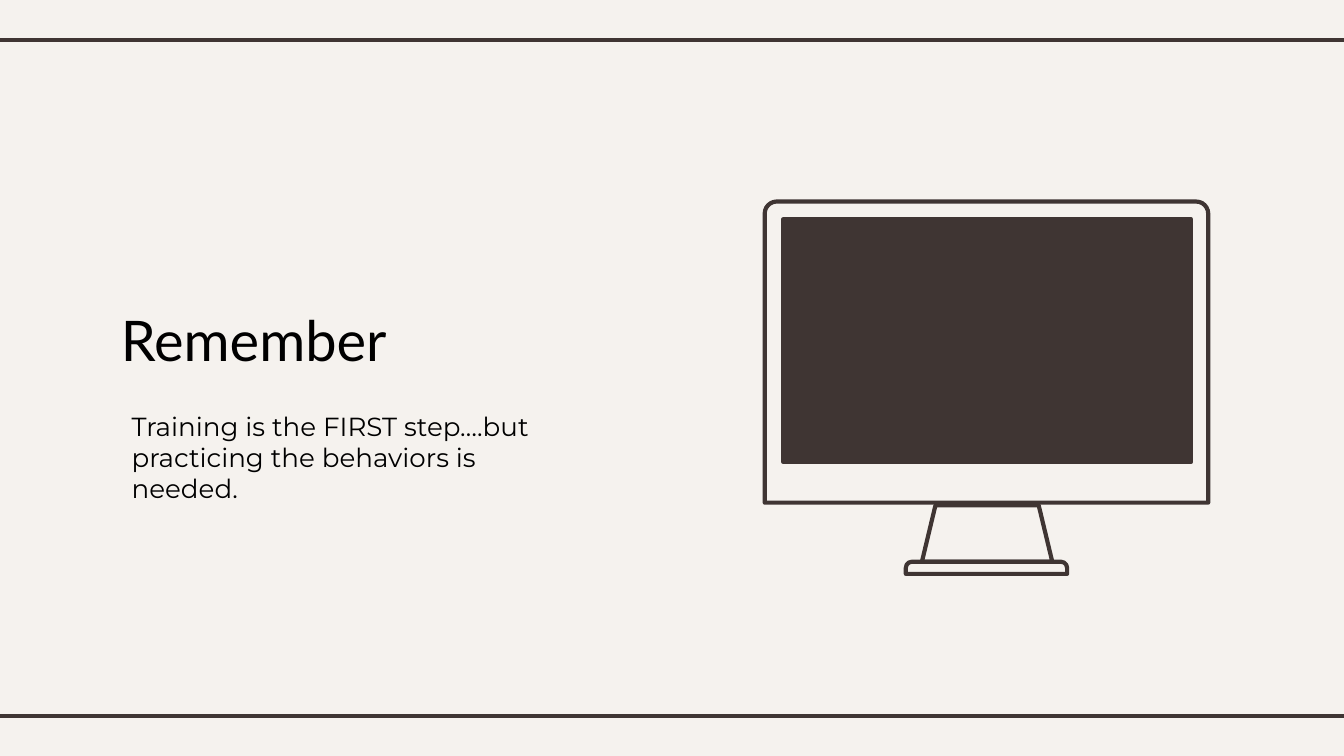
"""Build a closing reminder slide with a line-drawn desktop screen."""
from dataclasses import dataclass

from pptx import Presentation
from pptx.dml.color import RGBColor
from pptx.enum.shapes import MSO_CONNECTOR, MSO_SHAPE
from pptx.enum.text import MSO_ANCHOR, MSO_AUTO_SIZE, PP_ALIGN
from pptx.oxml.ns import qn
from pptx.shapes.placeholder import SlidePlaceholder
from pptx.shapes.shapetree import GroupShapes, SlideShapes
from pptx.util import Inches, Pt
from lxml import etree

STRAIGHT = MSO_CONNECTOR.STRAIGHT
RECT = MSO_SHAPE.RECTANGLE
ROUND_TOP = MSO_SHAPE.ROUND_2_SAME_RECTANGLE
TRAPEZOID = MSO_SHAPE.TRAPEZOID
LEFT = PP_ALIGN.LEFT
TOP = MSO_ANCHOR.TOP
NO_FIT = MSO_AUTO_SIZE.NONE


@dataclass(frozen=True)
class Theme:
    paper: RGBColor = RGBColor(0xF5, 0xF2, 0xEE)
    ink: RGBColor = RGBColor(0x3F, 0x35, 0x33)
    text: RGBColor = RGBColor(0, 0, 0)
    stroke: float = 2.25
    title_font: str = "Lato"
    title_size: int = 30
    body_font: str = "Montserrat"
    body_size: int = 14


@dataclass(frozen=True)
class Box:
    left: float
    top: float
    width: float
    height: float

    def lengths(self) -> list[int]:
        return [Inches(n) for n in (self.left, self.top, self.width, self.height)]


@dataclass(frozen=True)
class Part:
    kind: MSO_SHAPE
    box: Box
    adjust: tuple[float, ...] = ()
    solid: bool = False


@dataclass(frozen=True)
class Words:
    text: str
    box: Box
    font: str
    size: int
    after: int = 0


THEME = Theme()
RULES = (0.3, 5.33)
SCREEN = (
    Part(TRAPEZOID, Box(6.86, 3.76, 0.97, 0.42), (0.24,)),
    Part(ROUND_TOP, Box(6.74, 4.18, 1.2, 0.09), (0.5, 0)),
    Part(ROUND_TOP, Box(5.69, 1.5, 3.3, 2.24), (0.04, 0)),
    Part(RECT, Box(5.83, 1.63, 3.03, 1.81), solid=True),
)
TITLE = Words("Remember", Box(0.8, 2.17, 4.47, 0.74),
              THEME.title_font, THEME.title_size)
BODY = Words("Training is the FIRST step….but practicing the behaviors is needed.",
             Box(0.88, 2.95, 3.46, 0.61),
             THEME.body_font, THEME.body_size, 12)


def draw_rule(shapes: SlideShapes, top: float) -> None:
    rule = shapes.add_connector(
        STRAIGHT, Inches(-0.08), Inches(top), Inches(10.08), Inches(top))
    rule.line.color.rgb = THEME.ink
    rule.line.width = Pt(THEME.stroke)
    etree.SubElement(rule.element.spPr, qn("a:effectLst"))


def draw_part(shapes: GroupShapes, part: Part) -> None:
    shape = shapes.add_shape(part.kind, *part.box.lengths())
    for index, value in enumerate(part.adjust):
        shape.adjustments[index] = value
    shape.shadow.inherit = False
    shape.line.color.rgb = THEME.ink
    shape.line.width = Pt(THEME.stroke)
    if part.solid:
        shape.fill.solid()
        shape.fill.fore_color.rgb = THEME.ink
    else:
        shape.fill.background()


def fill_holder(holder: SlidePlaceholder, words: Words) -> None:
    holder.left, holder.top, holder.width, holder.height = words.box.lengths()
    frame = holder.text_frame
    frame.text = words.text
    frame.word_wrap = True
    frame.auto_size = NO_FIT
    frame.vertical_anchor = TOP
    frame.margin_left = frame.margin_right = Inches(0.1)
    frame.margin_top = frame.margin_bottom = Inches(0.1)
    para = frame.paragraphs[0]
    para.alignment = LEFT
    para.space_before = Pt(0)
    para.space_after = Pt(words.after)
    para.font.name = words.font
    para.font.size = Pt(words.size)
    para.font.color.rgb = THEME.text


def main() -> None:
    deck = Presentation()
    deck.slide_width = Inches(10)
    deck.slide_height = deck.slide_width * 9 // 16
    slide = deck.slides.add_slide(deck.slide_layouts[0])
    slide.background.fill.solid()
    slide.background.fill.fore_color.rgb = THEME.paper
    for top in RULES:
        draw_rule(slide.shapes, top)
    fill_holder(slide.shapes.title, TITLE)
    fill_holder(slide.placeholders[1], BODY)
    group = slide.shapes.add_group_shape()
    for part in SCREEN:
        draw_part(group.shapes, part)
    deck.save("out.pptx")


if __name__ == "__main__":
    main()
